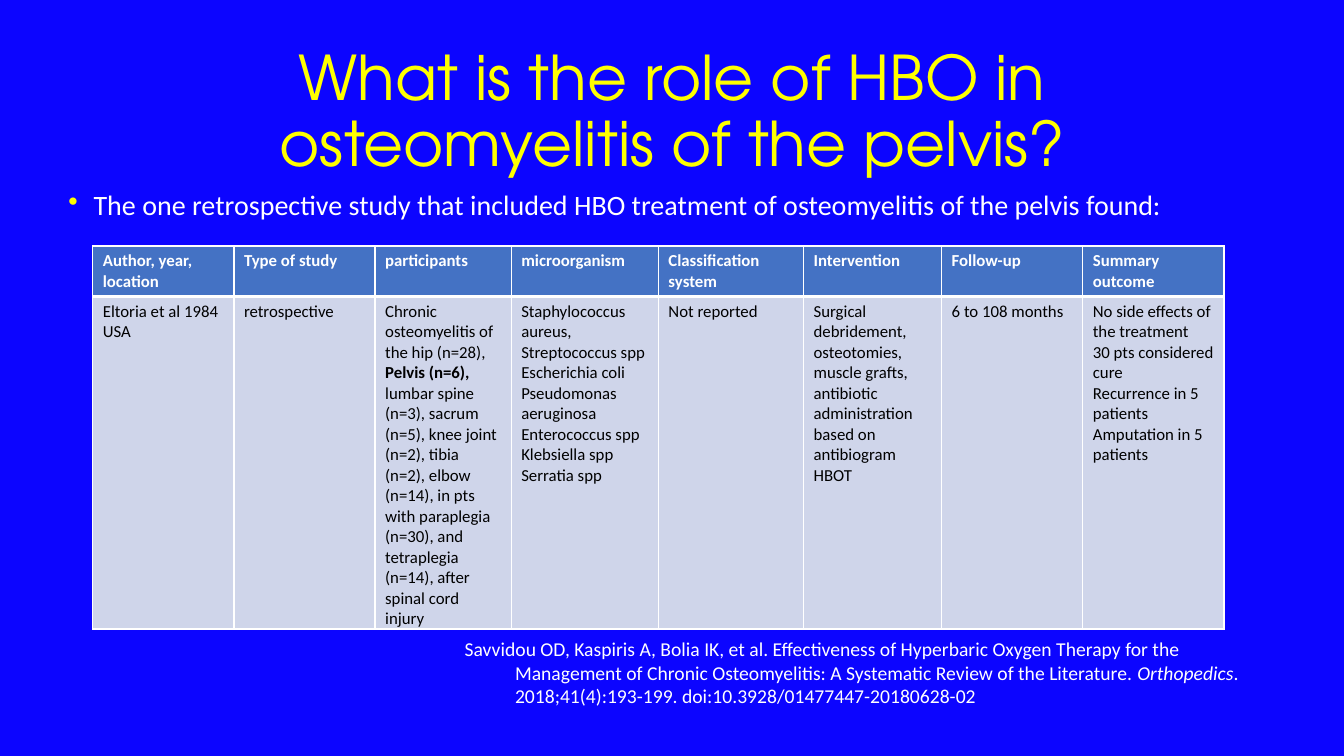
from dataclasses import dataclass
from typing import Any

from lxml import etree
from pptx import Presentation
from pptx import util as u
from pptx.dml import color
from pptx.enum import text
from pptx.oxml import ns

COLORS = {
    "background": "0C05FF",
    "title": "FFFF00",
    "light": "FFFFFF",
    "dark": "000000",
    "header": "4472C4",
    "body": "CFD5EA",
}


@dataclass(frozen=True)
class Span:
    text: str
    bold: bool = False
    italic: bool = False


@dataclass(frozen=True)
class Style:
    size: int
    color: str
    font: str = "Calibri"


@dataclass(frozen=True)
class TextBlock:
    left: float
    top: float
    width: float
    height: float
    style: Style
    spans: tuple[Span, ...]
    format: dict[str, Any]
    anchor: text.MSO_ANCHOR = text.MSO_ANCHOR.TOP
    indent: float = 0
    bullet: str = ""


@dataclass(frozen=True)
class Column:
    width: float
    heading: str
    paragraphs: tuple[tuple[Span, ...], ...]


def lines(*texts: str) -> tuple[tuple[Span, ...], ...]:
    """One plain paragraph for each text."""
    return tuple((Span(line),) for line in texts)


BLOCKS = [
    TextBlock(
        0.92, 0.4, 11.5, 1.45, Style(44, "title", "TeX Gyre Adventor"),
        (Span("What is the role of HBO in osteomyelitis of the pelvis?"),),
        {"alignment": text.PP_ALIGN.CENTER, "line_spacing": 0.9},
        anchor=text.MSO_ANCHOR.MIDDLE,
    ),
    TextBlock(
        4.51, 6.27, 8.39, 0.81, Style(14, "light"),
        (
            Span("Savvidou OD, Kaspiris A, Bolia IK, et al. Effectiveness of Hyperbaric Oxygen "
                 "Therapy for the Management of Chronic Osteomyelitis: A Systematic Review "
                 "of the Literature. "),
            Span("Orthopedics", italic=True),
            Span(". 2018;41(4):193-199. doi:10.3928/01477447-20180628-02"),
        ),
        {}, indent=0.5,
    ),
    TextBlock(
        0.58, 1.85, 12.49, 0.5, Style(20, "light"),
        (Span("The one retrospective study that included HBO treatment of osteomyelitis "
              "of the pelvis found:"),),
        {"line_spacing": 0.9}, indent=0.25, bullet="•",
    ),
]

COLUMNS = [
    Column(1.4, "Author, year, location", lines("Eltoria et al 1984 USA")),
    Column(1.4, "Type of study", lines("retrospective")),
    Column(1.35, "participants", ((
        Span("Chronic osteomyelitis of the hip (n=28), "),
        Span("Pelvis (n=6), ", bold=True),
        Span("lumbar spine (n=3), sacrum (n=5), knee joint (n=2), tibia (n=2), elbow (n=14), "
             "in pts with paraplegia (n=30), and tetraplegia (n=14), after spinal cord injury"),
    ),)),
    Column(1.46, "microorganism", lines(
        "Staphylococcus aureus, Streptococcus spp", "Escherichia coli",
        "Pseudomonas aeruginosa", "Enterococcus spp", "Klebsiella spp", "Serratia spp")),
    Column(1.44, "Classification system", lines("Not reported")),
    Column(1.37, "Intervention", lines(
        "Surgical debridement, osteotomies, muscle grafts, antibiotic administration "
        "based on antibiogram HBOT")),
    Column(1.4, "Follow-up", lines("6 to 108 months")),
    Column(1.4, "Summary outcome", lines(
        "No side effects of the treatment", "30 pts considered cure",
        "Recurrence in 5 patients", "Amputation in 5 patients")),
]
ROW_HEIGHTS = (0.5, 3.3)


def rgb(name: str) -> color.RGBColor:
    return color.RGBColor.from_string(COLORS[name])


def write_spans(para: Any, spans: tuple[Span, ...], style: Style) -> None:
    for span in spans:
        run = para.add_run()
        run.text = span.text
        values = {"name": style.font, "size": u.Pt(style.size),
                  "bold": span.bold, "italic": span.italic}
        for name, value in values.items():
            setattr(run.font, name, value)
        run.font.color.rgb = rgb(style.color)


def add_child(parent: Any, tag: str, **attributes: str) -> Any:
    return etree.SubElement(parent, ns.qn(tag), attributes)


def draw_block(page: Any, block: TextBlock) -> None:
    box = page.shapes.add_textbox(u.Inches(block.left), u.Inches(block.top),
                                  u.Inches(block.width), u.Inches(block.height))
    frame = box.text_frame
    frame.word_wrap = True
    frame.vertical_anchor = block.anchor
    para = frame.paragraphs[0]
    for name, value in block.format.items():
        setattr(para, name, value)
    if block.indent:
        # Hanging indent, with a coloured bullet where one is wanted
        properties = para._p.get_or_add_pPr()
        properties.set("marL", str(u.Inches(block.indent)))
        properties.set("indent", str(-u.Inches(block.indent)))
        if block.bullet:
            add_child(add_child(properties, "a:buClr"), "a:srgbClr", val=COLORS["title"])
            add_child(properties, "a:buChar", char=block.bullet)
    write_spans(para, block.spans, block.style)


def fill_cell(cell: Any, paragraphs: tuple[tuple[Span, ...], ...], style: Style,
              fill: str, borders: dict[str, int]) -> None:
    properties = cell._tc.get_or_add_tcPr()
    for side, points in borders.items():
        line = add_child(properties, f"a:ln{side}", w=str(u.Pt(points)))
        add_child(add_child(line, "a:solidFill"), "a:srgbClr", val=COLORS["light"])
    cell.fill.solid()
    cell.fill.fore_color.rgb = rgb(fill)
    frame = cell.text_frame
    for index, spans in enumerate(paragraphs):
        para = frame.add_paragraph() if index else frame.paragraphs[0]
        write_spans(para, spans, style)


def draw_table(page: Any) -> None:
    width = sum(column.width for column in COLUMNS)
    table = page.shapes.add_table(
        len(ROW_HEIGHTS), len(COLUMNS), u.Inches(0.92), u.Inches(2.44),
        u.Inches(width), u.Inches(sum(ROW_HEIGHTS))).table
    for row, height in zip(table.rows, ROW_HEIGHTS):
        row.height = u.Inches(height)
    for index, column in enumerate(COLUMNS):
        table.columns[index].width = u.Inches(column.width)
        # A thick rule separates the headings from the findings
        fill_cell(table.cell(0, index), ((Span(column.heading, bold=True),),),
                  Style(12, "light"), "header", {"L": 1, "R": 1, "T": 1, "B": 3})
        fill_cell(table.cell(1, index), column.paragraphs,
                  Style(12, "dark"), "body", {"L": 1, "R": 1, "T": 3, "B": 1})


def main() -> None:
    deck = Presentation()
    deck.slide_width, deck.slide_height = u.Inches(13.33), u.Inches(7.5)
    page = deck.slides.add_slide(deck.slide_layouts[6])
    page.background.fill.solid()
    page.background.fill.fore_color.rgb = rgb("background")
    # Title, citation and lead sentence
    for block in BLOCKS:
        draw_block(page, block)
    # Study summary
    draw_table(page)
    deck.save("out.pptx")


if __name__ == "__main__":
    main()
